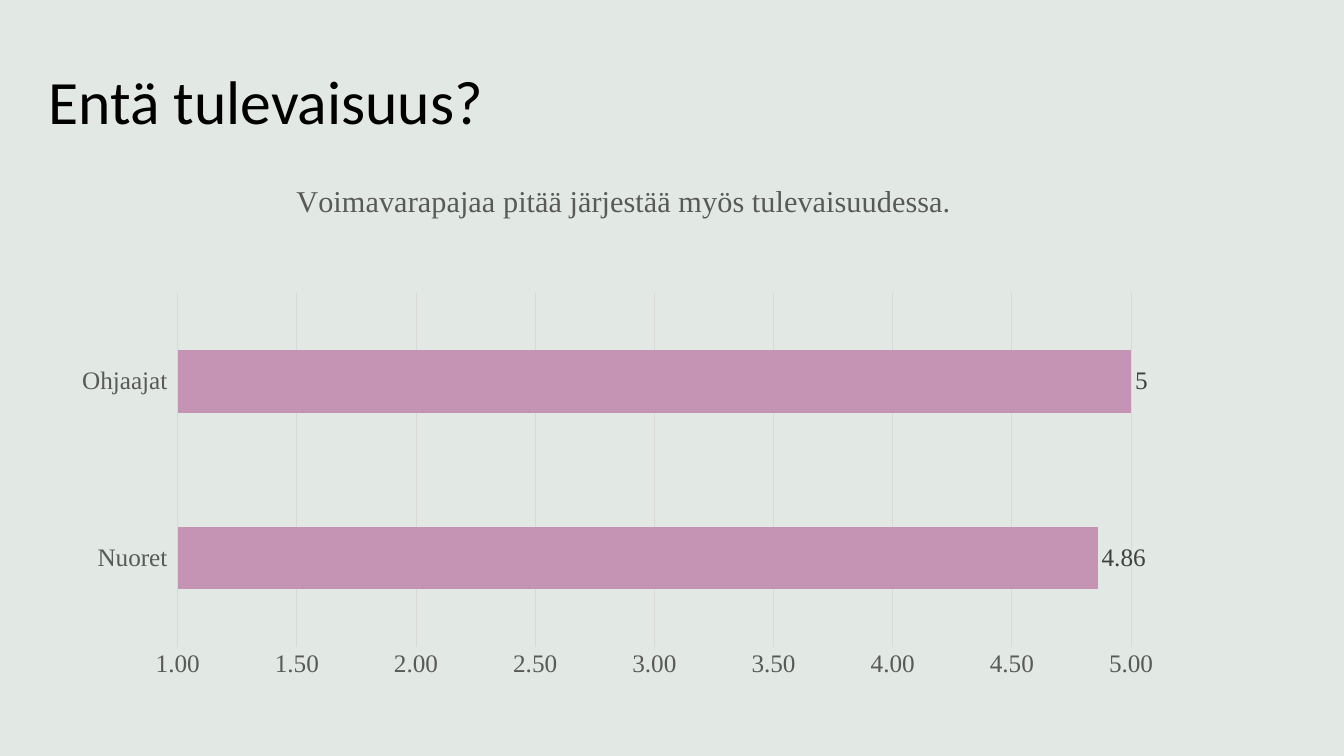
import pptx
import pptx.util
import pptx.dml.color
import pptx.chart.data
import pptx.enum.chart
import pptx.enum.text
import pptx.oxml
import pptx.oxml.ns

Pt = pptx.util.Pt
enum = pptx.enum.chart

# Content
HEAD = "Entä tulevaisuus?"
CLAIM = "Voimavarapajaa pitää järjestää myös tulevaisuudessa."
SCORES = {"Nuoret ": 4.86, "Ohjaajat ": 5}

# Places in points, plot area as shares of the chart
SIZE = (960, 540)
HEAD_BOX = (27.4, 14.4, 828, 87.8)
CHART_BOX = (27.4, 113.8, 836.6, 393.8)
PLOT = {"x": 0.119, "y": 0.242, "w": 0.814, "h": 0.642}
SERIF = "Times New Roman"
GREY, PALE = "595959", "D9D9D9"


def tint(color):
    return pptx.dml.color.RGBColor.from_string(color)


def style(font, size, color, face=SERIF):
    font.name, font.size, font.bold = face, Pt(size), False
    font.color.rgb = tint(color)


def rule(line):
    line.width = Pt(0.75)
    line.color.rgb = tint(PALE)


# Slide and background
deck = pptx.Presentation()
deck.slide_width, deck.slide_height = map(Pt, SIZE)
slide = deck.slides.add_slide(deck.slide_layouts[5])
slide.background.fill.solid()
slide.background.fill.fore_color.rgb = tint("E2E8E4")

# Title
head = slide.shapes.title
head.left, head.top, head.width, head.height = map(Pt, HEAD_BOX)
frame = head.text_frame
frame.text = HEAD
frame.word_wrap = True
frame.vertical_anchor = pptx.enum.text.MSO_ANCHOR.BOTTOM
para = frame.paragraphs[0]
para.alignment = pptx.enum.text.PP_ALIGN.LEFT
para.line_spacing = 0.9
style(para.runs[0].font, 44, "000000", "Calibri")

# Chart
data = pptx.chart.data.CategoryChartData()
data.categories = list(SCORES)
data.add_series(CLAIM, list(SCORES.values()))
chart = slide.shapes.add_chart(
    enum.XL_CHART_TYPE.BAR_CLUSTERED, *map(Pt, CHART_BOX), data).chart
style(chart.font, 18, "000000")
chart.has_legend = False
chart.has_title = True
chart.chart_title.text_frame.text = CLAIM
style(chart.chart_title.text_frame.paragraphs[0].runs[0].font, 21.6, GREY)
chart.chart_title.include_in_layout = False

# Axes
cat, val = chart.category_axis, chart.value_axis
for axis in (cat, val):
    axis.major_tick_mark = axis.minor_tick_mark = enum.XL_TICK_MARK.NONE
    style(axis.tick_labels.font, 18, GREY)
rule(cat.format.line)
val.format.line.fill.background()
val.minimum_scale, val.maximum_scale, val.major_unit = 1, 5, 0.5
val.tick_labels.number_format = "0.00"
val.tick_labels.number_format_is_linked = False
val.has_major_gridlines = True
rule(val.major_gridlines.format.line)

# Bars and labels
plot = chart.plots[0]
plot.gap_width = 182
plot.vary_by_categories = False
bars = plot.series[0]
bars.format.fill.solid()
bars.format.fill.fore_color.rgb = tint("C593B3")
bars.format.line.fill.background()
tags = bars.data_labels
tags.show_value = True
tags.position = enum.XL_LABEL_POSITION.OUTSIDE_END
style(tags.font, 18, "404040")

# Fixed inner plot area
area = chart._chartSpace.chart.plotArea
for old in area.findall(pptx.oxml.ns.qn("c:layout")):
    area.remove(old)
modes = '<c:layoutTarget val="inner"/><c:xMode val="edge"/><c:yMode val="edge"/>'
marks = "".join(f'<c:{key} val="{num}"/>' for key, num in PLOT.items())
area.insert(0, pptx.oxml.parse_xml(
    f'<c:layout {pptx.oxml.ns.nsdecls("c")}><c:manualLayout>'
    f'{modes}{marks}</c:manualLayout></c:layout>'))

deck.save("out.pptx")
